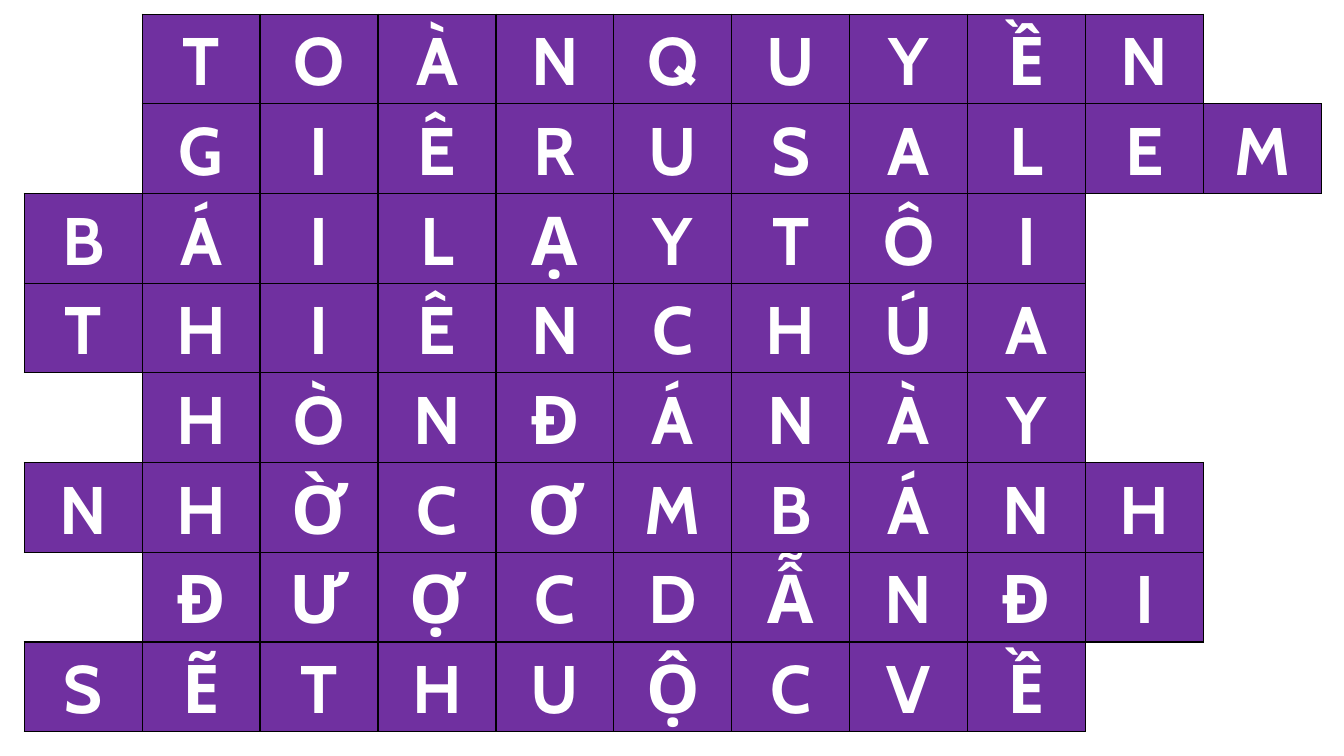
from dataclasses import dataclass

from lxml.etree import SubElement
from pptx import Presentation
from pptx.dml.color import RGBColor
from pptx.enum.text import MSO_ANCHOR, PP_ALIGN
from pptx.oxml.ns import qn
from pptx.slide import Slide
from pptx.table import _Cell
from pptx.util import Inches, Pt

PURPLE = RGBColor(0x70, 0x30, 0xA0)
WHITE = RGBColor(0xFF, 0xFF, 0xFF)
BLACK = RGBColor(0x00, 0x00, 0x00)
COLUMN_COUNT = 11
COLUMN_WIDTH = Inches(1.17)
ROW_HEIGHT = Inches(0.89)


@dataclass(frozen=True)
class Answer:
    start: int
    letters: str

    def letter_at(self, column: int) -> str:
        position = column - self.start
        return self.letters[position] if 0 <= position < len(self.letters) else ""


ANSWERS = [
    Answer(1, "TOÀNQUYỀN"),
    Answer(1, "GIÊRUSALEM"),
    Answer(0, "BÁILẠYTÔI"),
    Answer(0, "THIÊNCHÚA"),
    Answer(1, "HÒNĐÁNÀY"),
    Answer(0, "NHỜCƠMBÁNH"),
    Answer(1, "ĐƯỢCDẪNĐI"),
    Answer(0, "SẼTHUỘCVỀ"),
]


def letter_at(row: int, column: int) -> str:
    return ANSWERS[row].letter_at(column) if 0 <= row < len(ANSWERS) else ""


def draw_borders(cell: _Cell, row: int, column: int) -> None:
    properties = cell._tc.get_or_add_tcPr()
    neighbours = {
        "a:lnL": (row, column - 1),
        "a:lnR": (row, column + 1),
        "a:lnT": (row - 1, column),
        "a:lnB": (row + 1, column),
    }
    for tag, neighbour in neighbours.items():
        line = SubElement(properties, qn(tag), w=str(Pt(1)))
        if letter_at(row, column) or letter_at(*neighbour):
            fill = SubElement(line, qn("a:solidFill"))
            SubElement(fill, qn("a:srgbClr"), val=str(BLACK))
        else:
            SubElement(line, qn("a:noFill"))


def write_letter(cell: _Cell, letter: str) -> None:
    cell.vertical_anchor = MSO_ANCHOR.MIDDLE
    cell.margin_left = cell.margin_right = Inches(0.07)
    cell.margin_top = cell.margin_bottom = 0
    para = cell.text_frame.paragraphs[0]
    para.text = letter
    para.alignment = PP_ALIGN.CENTER
    para.line_spacing = 1.07
    para.space_after = Pt(8)
    para.font.name = "Cabin"
    para.font.size = Pt(48)
    para.font.bold = True
    para.font.color.rgb = WHITE


def draw_crossword(page: Slide) -> None:
    table = page.shapes.add_table(
        len(ANSWERS), COLUMN_COUNT, Inches(0.24), Inches(0.14),
        COLUMN_WIDTH * COLUMN_COUNT, ROW_HEIGHT * len(ANSWERS),
    ).table
    table.first_row = False
    table.horz_banding = False
    for table_column in table.columns:
        table_column.width = COLUMN_WIDTH
    for table_row in table.rows:
        table_row.height = ROW_HEIGHT
    for row, answer in enumerate(ANSWERS):
        for column in range(COLUMN_COUNT):
            cell = table.cell(row, column)
            letter = answer.letter_at(column)
            draw_borders(cell, row, column)
            cell.fill.solid()
            cell.fill.fore_color.rgb = PURPLE if letter else WHITE
            if letter:
                write_letter(cell, letter)


def main() -> None:
    deck = Presentation()
    deck.slide_width = Inches(13.33)
    deck.slide_height = Inches(7.5)
    page = deck.slides.add_slide(deck.slide_layouts[6])
    draw_crossword(page)
    deck.save("out.pptx")


if __name__ == "__main__":
    main()
